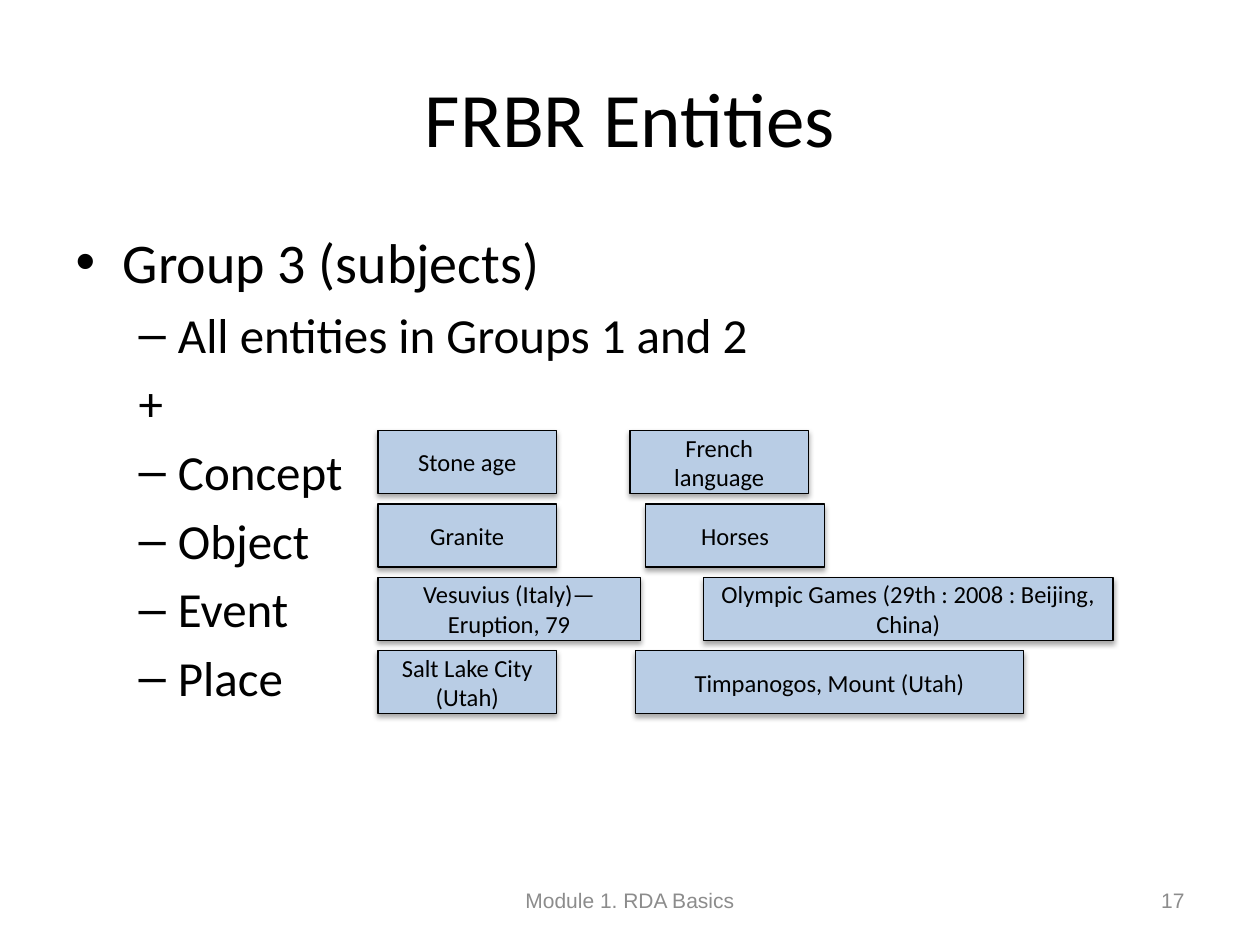
from dataclasses import dataclass

from lxml.etree import SubElement
from pptx import Presentation
from pptx.dml.color import RGBColor
from pptx.enum.shapes import MSO_SHAPE
from pptx.enum.text import MSO_ANCHOR, PP_ALIGN
from pptx.oxml.ns import qn
from pptx.util import Cm, Pt


@dataclass(frozen=True)
class Theme:
    ink: RGBColor = RGBColor(0, 0, 0)
    fill: RGBColor = RGBColor(0xB9, 0xCD, 0xE5)
    gray: RGBColor = RGBColor(0x8C, 0x8C, 0x8C)
    font: str = "Calibri"
    foot: str = "Arial"
    title: int = 44
    levels: tuple = (32, 28)
    box: int = 14
    note: int = 12


@dataclass(frozen=True)
class Item:
    text: str
    level: int = 1
    mark: bool = True


@dataclass(frozen=True)
class Box:
    """An example on a row; left and width are in centimetres."""
    text: str
    row: int
    left: float
    width: float = 3.6


@dataclass(frozen=True)
class Note:
    text: str
    left: float
    width: float
    align: PP_ALIGN


THEME = Theme()
TOP, PITCH, HEIGHT = 8.68, 1.48, 1.27
ITEMS = [
    Item("Group 3 (subjects)", 0),
    Item("All entities in Groups 1 and 2"),
    Item("+", mark=False),
    Item("Concept"),
    Item("Object"),
    Item("Event"),
    Item("Place"),
]
BOXES = [
    Box("Stone age", 0, 7.62),
    Box("French language", 0, 12.7),
    Box("Granite", 1, 7.62),
    Box("Horses", 1, 13.02),
    Box("Vesuvius (Italy)—Eruption, 79", 2, 7.62, 5.29),
    Box("Olympic Games (29th : 2008 : Beijing, China)", 2, 14.18, 8.26),
    Box("Salt Lake City (Utah)", 3, 7.62),
    Box("Timpanogos, Mount (Utah)", 3, 12.81, 7.83),
]
NOTES = [
    Note("Module 1. RDA Basics", 8.68, 8.04, PP_ALIGN.CENTER),
    Note("17", 18.2, 5.93, PP_ALIGN.RIGHT),
]


def style(para, size: int, color=THEME.ink, name: str = THEME.font) -> None:
    para.font.size = Pt(size)
    para.font.color.rgb = color
    para.font.name = name


def place(shape, left: float, top: float, width: float, height: float) -> None:
    shape.left, shape.top = Cm(left), Cm(top)
    shape.width, shape.height = Cm(width), Cm(height)


def label(shape, text: str, align: PP_ALIGN):
    """Write one line of text, centred vertically, and return its paragraph."""
    frame = shape.text_frame
    frame.word_wrap = True
    frame.vertical_anchor = MSO_ANCHOR.MIDDLE
    para = frame.paragraphs[0]
    para.text = text
    para.alignment = align
    return para


def add_list(body, items: list[Item]) -> None:
    frame = body.text_frame
    for i, item in enumerate(items):
        para = frame.add_paragraph() if i else frame.paragraphs[0]
        para.text = item.text
        para.level = item.level
        if i == 0:
            para.space_before = Pt(0)
        if not item.mark:
            SubElement(para._p.get_or_add_pPr(), qn("a:buNone"))
        style(para, THEME.levels[item.level])


def add_shadow(shape) -> None:
    shape.shadow.inherit = False
    effects = shape._element.spPr.find(qn("a:effectLst"))
    outer = SubElement(effects, qn("a:outerShdw"), blurRad=str(Pt(3.1)),
                       dist=str(Pt(1.8)), dir="5400000", rotWithShape="0")
    color = SubElement(outer, qn("a:srgbClr"), val=str(THEME.ink))
    SubElement(color, qn("a:alpha"), val="35000")


def add_box(slide, box: Box) -> None:
    shape = slide.shapes.add_shape(
        MSO_SHAPE.FLOWCHART_PROCESS, Cm(box.left), Cm(TOP + box.row * PITCH),
        Cm(box.width), Cm(HEIGHT))
    shape.fill.solid()
    shape.fill.fore_color.rgb = THEME.fill
    shape.line.color.rgb = THEME.ink
    shape.line.width = Pt(0.75)
    add_shadow(shape)
    style(label(shape, box.text, PP_ALIGN.CENTER), THEME.box)


def add_note(slide, note: Note) -> None:
    shape = slide.shapes.add_textbox(
        Cm(note.left), Cm(17.65), Cm(note.width), Cm(1.01))
    para = label(shape, note.text, note.align)
    style(para, THEME.note, THEME.gray, THEME.foot)


def main() -> None:
    deck = Presentation()
    deck.slide_width, deck.slide_height = Cm(25.4), Cm(19.05)
    slide = deck.slides.add_slide(deck.slide_layouts[1])
    title, body = slide.placeholders
    place(title, 1.27, 0.76, 22.86, 3.18)
    style(label(title, "FRBR Entities", PP_ALIGN.CENTER), THEME.title)
    place(body, 1.27, 4.45, 22.86, 12.57)
    add_list(body, ITEMS)
    for box in BOXES:
        add_box(slide, box)
    for note in NOTES:
        add_note(slide, note)
    deck.save("out.pptx")


if __name__ == "__main__":
    main()
